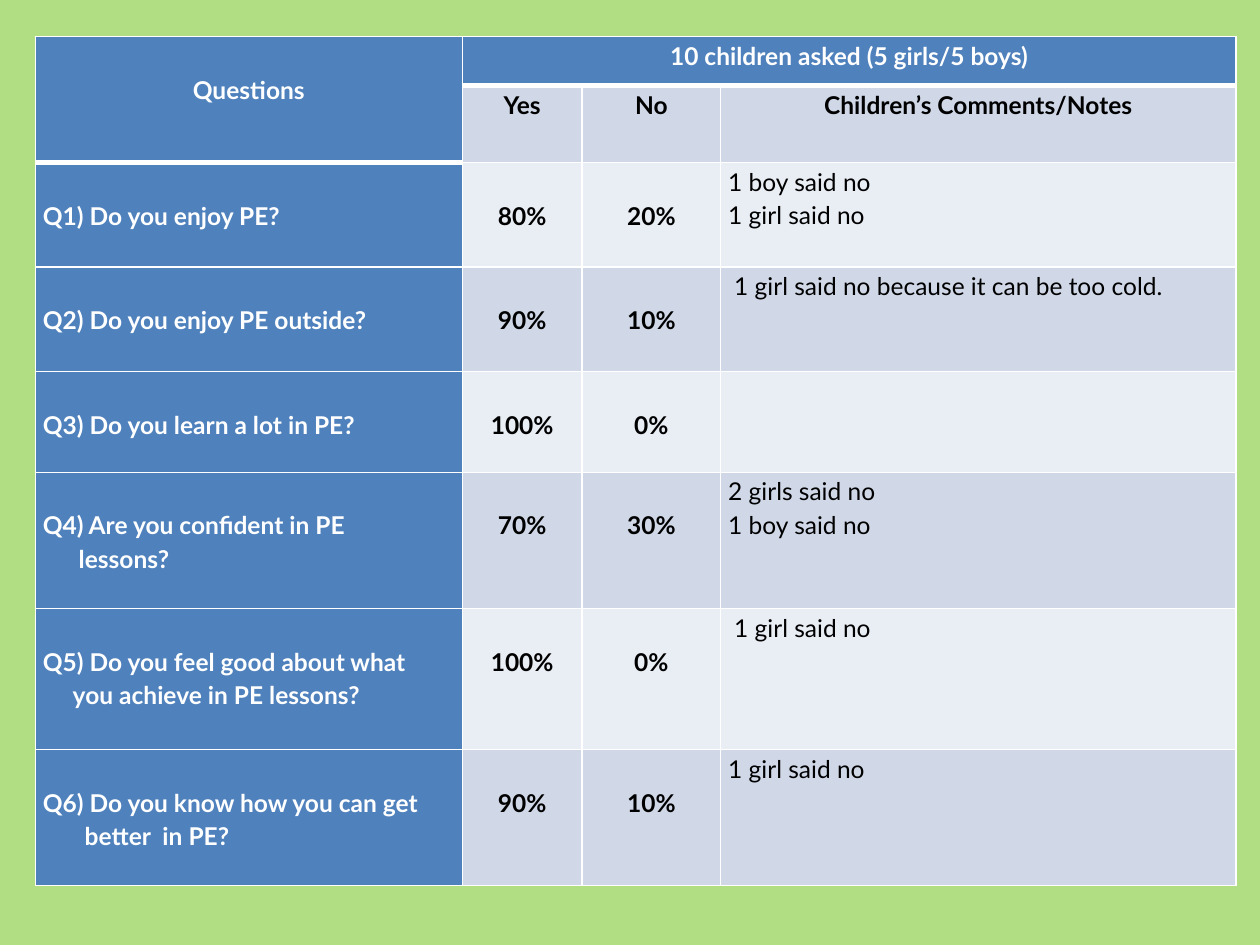
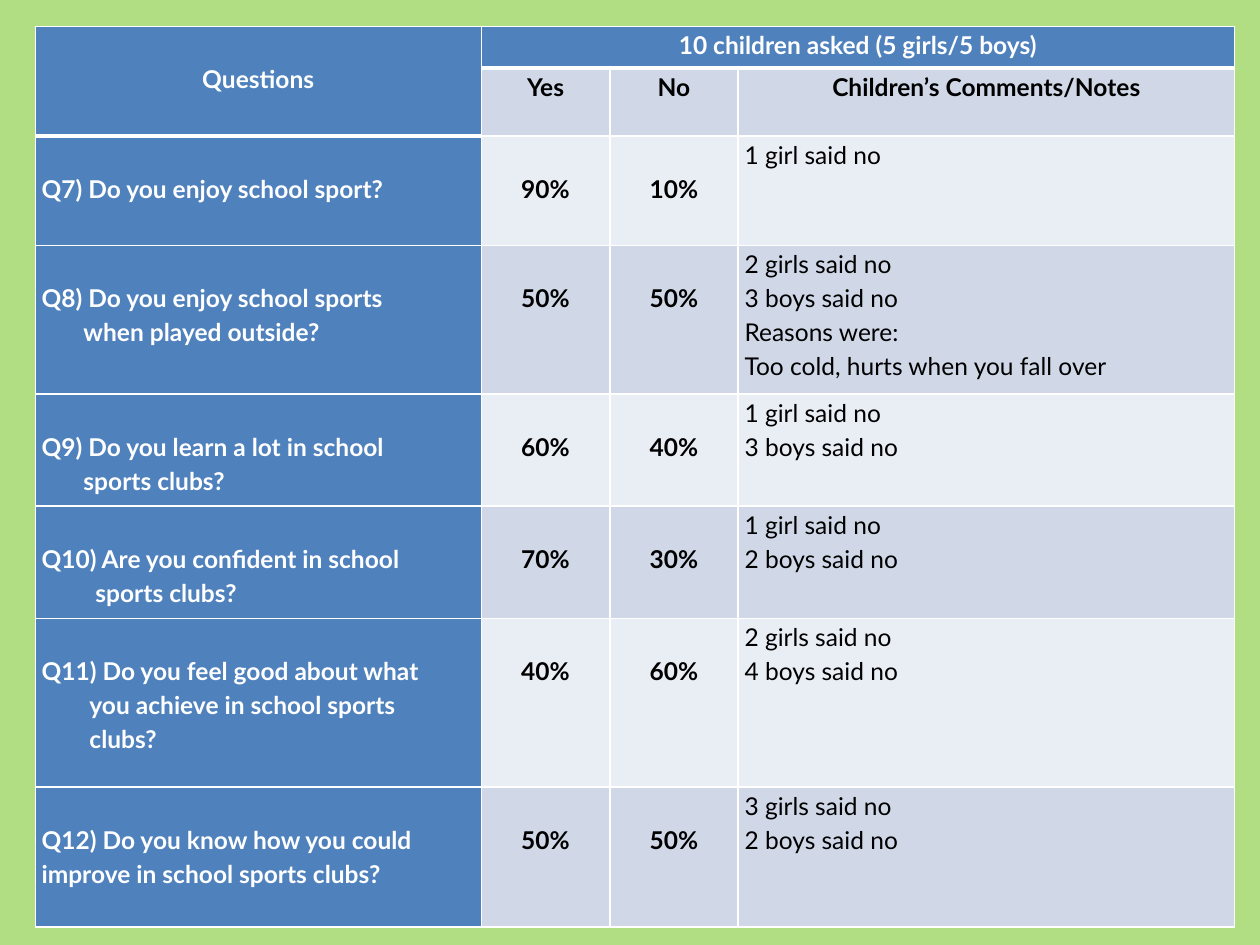
from lxml import etree
from pptx import Presentation
from pptx.dml.color import RGBColor
from pptx.enum.text import PP_ALIGN
from pptx.oxml.ns import qn
from pptx.util import Inches, Pt

LEFT, CENTER = PP_ALIGN.LEFT, PP_ALIGN.CENTER

# Shared look
PAGE_GREEN = "B2DE83"
HEAD_BLUE = "4F81BD"
BANDS = ("E9EDF4", "D0D8E8")
WHITE, BLACK = "FFFFFF", "000000"
FONT, SIZE = "Lato", 14
LINE_SPACING = 1.15
LINE_DROP = 0.27     # height of one line of text
INDENT_STEP = 0.0475  # width of one step of indent
TABLE_LEFT = 0.28
HEAD_ROWS = 2
THIN, THICK = 1, 3

# Each row: question lines, yes, no, comment lines. A line may be (steps, text).
PE_ROWS = [
    (["Q1) Do you enjoy PE?"], "80%", "20%", ["1 boy said no", "1 girl said no"]),
    (["Q2) Do you enjoy PE outside?"], "90%", "10%",
     [(1, "1 girl said no because it can be too cold.")]),
    (["Q3) Do you learn a lot in PE?"], "100%", "0%", []),
    (["Q4) Are you confident in PE", (6, "lessons?")], "70%", "30%",
     ["2 girls said no", "1 boy said no"]),
    (["Q5) Do you feel good about what", (5, "you achieve in PE lessons?")],
     "100%", "0%", [(1, "1 girl said no")]),
    (["Q6) Do you know how you can get", (7, "better  in PE?")],
     "90%", "10%", ["1 girl said no"]),
]
SPORT_ROWS = [
    (["Q7) Do you enjoy school sport?"], "90%", "10%", ["1 girl said no"]),
    (["Q8) Do you enjoy school sports", (7, "when played outside?")], "50%", "50%",
     ["2 girls said no", "3 boys said no", "Reasons were:",
      "Too cold, hurts when you fall over"]),
    (["Q9) Do you learn a lot in school", (7, "sports clubs?")], "60%", "40%",
     ["1 girl said no", "3 boys said no"]),
    (["Q10) Are you confident in school", (9, "sports clubs?")], "70%", "30%",
     ["1 girl said no", "2 boys said no"]),
    (["Q11) Do you feel good about what", (8, "you achieve in school sports"),
      (8, "clubs?")], "40%", "60%", ["2 girls said no", "4 boys said no"]),
    (["Q12) Do you know how you could improve in school sports clubs?"],
     "50%", "50%", ["3 girls said no", "2 boys said no"]),
]


def rgb(value):
    return RGBColor.from_string(value)


def set_borders(cell, top, bottom):
    """Draw white cell borders; left and right are always thin."""
    props = cell._tc.get_or_add_tcPr()
    widths = (("a:lnL", THIN), ("a:lnR", THIN), ("a:lnT", top), ("a:lnB", bottom))
    for position, (tag, width) in enumerate(widths):
        line = etree.Element(qn(tag), w=str(Pt(width)))
        fill = etree.SubElement(line, qn("a:solidFill"))
        etree.SubElement(fill, qn("a:srgbClr"), val=WHITE)
        props.insert(position, line)


def style_cell(cell, fill, side_margin, top=THIN, bottom=THIN):
    cell.fill.solid()
    cell.fill.fore_color.rgb = rgb(fill)
    cell.margin_left = cell.margin_right = Inches(side_margin)
    cell.margin_top = cell.margin_bottom = 0
    set_borders(cell, top, bottom)


def write_cell(cell, lines, color=BLACK, bold=True, align=CENTER, drop=0):
    """Write one paragraph a line, the first one lowered by drop lines."""
    cell.margin_top = Inches(drop * LINE_DROP)
    frame = cell.text_frame
    for number, line in enumerate(lines):
        steps, text = line if isinstance(line, tuple) else (0, line)
        para = frame.add_paragraph() if number else frame.paragraphs[0]
        para.alignment = align
        para.line_spacing = LINE_SPACING
        if steps:
            para._p.get_or_add_pPr().set("marL", str(Inches(steps * INDENT_STEP)))
        span = para.add_run()
        span.text = text
        span.font.name, span.font.size, span.font.bold = FONT, Pt(SIZE), bold
        span.font.color.rgb = rgb(color)


def style_grid(table, side_margin):
    """Blue head row and question column, banded answers, thick rule below heads."""
    for r in range(len(table.rows)):
        for c in range(len(table.columns)):
            last_head = HEAD_ROWS - 1 if c == 0 else 0
            fill = HEAD_BLUE if r == 0 or c == 0 else BANDS[r % 2]
            style_cell(table.cell(r, c), fill, side_margin,
                       top=THICK if r == last_head + 1 else THIN,
                       bottom=THICK if r in (0, last_head) else THIN)


def write_heads(table):
    table.cell(0, 0).merge(table.cell(1, 0))
    table.cell(0, 1).merge(table.cell(0, 3))
    write_cell(table.cell(0, 0), ["Questions"], WHITE, drop=1)
    write_cell(table.cell(0, 1), ["10 children asked (5 girls/5 boys)"], WHITE)
    for c, head in enumerate(("Yes", "No", "Children’s Comments/Notes"), 1):
        write_cell(table.cell(1, c), [head])


def add_survey(deck, top, columns, heights, side_margin, answers):
    page = deck.slides.add_slide(deck.slide_layouts[6])
    page.background.fill.solid()
    page.background.fill.fore_color.rgb = rgb(PAGE_GREEN)

    box = page.shapes.add_table(len(heights), len(columns), Inches(TABLE_LEFT),
                                Inches(top), Inches(sum(columns)), Inches(sum(heights)))
    table = box.table
    table.first_row = table.horz_banding = False
    for column, width in zip(table.columns, columns):
        column.width = Inches(width)
    for row, height in zip(table.rows, heights):
        row.height = Inches(height)

    style_grid(table, side_margin)
    write_heads(table)
    for r, (question, yes, no, comments) in enumerate(answers, HEAD_ROWS):
        write_cell(table.cell(r, 0), question, WHITE, align=LEFT, drop=1)
        write_cell(table.cell(r, 1), [yes], drop=1)
        write_cell(table.cell(r, 2), [no], drop=1)
        write_cell(table.cell(r, 3), comments, bold=False, align=LEFT)


def main():
    deck = Presentation()
    deck.slide_width, deck.slide_height = Inches(10), Inches(7.5)
    add_survey(deck, 0.29, (3.39, 0.95, 1.1, 4.09),
               (0.39, 0.61, 0.83, 0.83, 0.8, 1.08, 1.12, 1.08), 0.06, PE_ROWS)
    add_survey(deck, 0.21, (3.54, 1.02, 1.02, 3.94),
               (0.33, 0.53, 0.87, 1.18, 0.89, 0.89, 1.34, 1.11), 0.05, SPORT_ROWS)
    deck.save("out.pptx")


if __name__ == "__main__":
    main()
